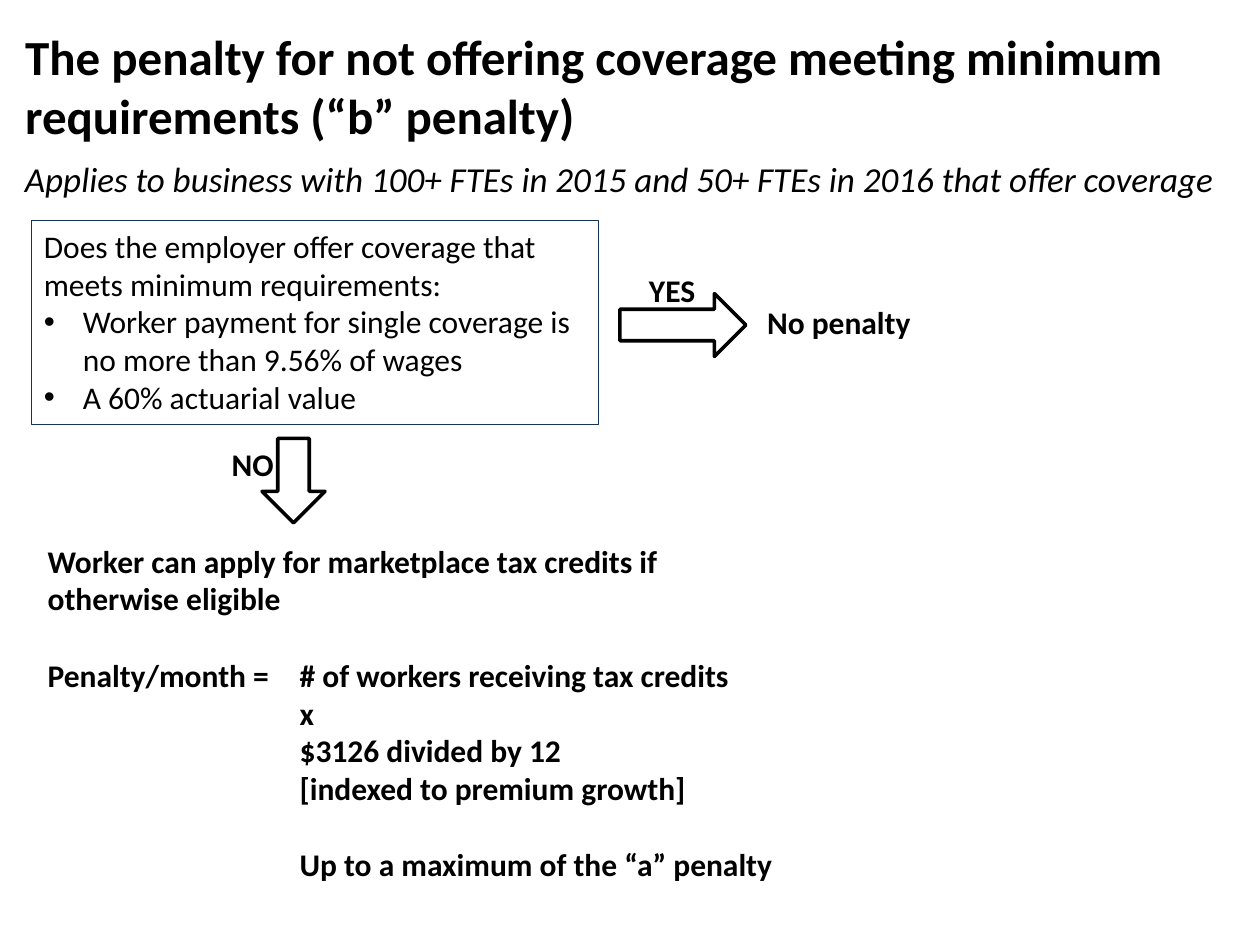
from lxml import etree
from pptx import Presentation
from pptx import util as u
from pptx.dml.color import RGBColor
from pptx.enum import shapes, text
from pptx.oxml.ns import qn

BLACK = RGBColor(0x00, 0x00, 0x00)
WHITE = RGBColor(0xFF, 0xFF, 0xFF)
NAVY = RGBColor(0x13, 0x35, 0x59)
LEFT = text.PP_ALIGN.LEFT
CENTER = text.PP_ALIGN.CENTER


class FlowPage:
    font = "Calibri"
    size = 18
    blank_line = 22

    def __init__(self, deck):
        self.page = deck.slides.add_slide(deck.slide_layouts[5])

    def frame(self, box):
        frame = box.text_frame
        frame.word_wrap = True
        frame.auto_size = text.MSO_AUTO_SIZE.NONE
        frame.vertical_anchor = text.MSO_ANCHOR.TOP
        return frame

    def add_words(self, para, words, size=None, bold=False, italic=False, align=LEFT):
        para.alignment = align
        span = para.add_run()
        span.text = words
        span.font.name = self.font
        span.font.size = u.Pt(size or self.size)
        span.font.bold = bold
        span.font.italic = italic
        span.font.color.rgb = BLACK

    def indent(self, para, margin, first=0, bullet=None):
        props = para._p.get_or_add_pPr()
        props.set("marL", str(u.Inches(margin)))
        props.set("indent", str(u.Inches(first)))
        if bullet:
            etree.SubElement(props, qn("a:buFont")).set("typeface", "Arial")
            etree.SubElement(props, qn("a:buChar")).set("char", bullet)

    def title(self, words, left, top, width, height):
        box = self.page.shapes.title
        box.left, box.top = u.Inches(left), u.Inches(top)
        box.width, box.height = u.Inches(width), u.Inches(height)
        self.add_words(self.frame(box).paragraphs[0], words, size=28, bold=True)

    def label(self, words, left, top, width, height, **style):
        box = self.page.shapes.add_textbox(*map(u.Inches, (left, top, width, height)))
        frame = self.frame(box)
        self.add_words(frame.paragraphs[0], words, **style)
        return frame

    def shape(self, kind, left, top, width, height, line, weight, fill=None):
        box = self.page.shapes.add_shape(kind, *map(u.Inches, (left, top, width, height)))
        box.shadow.inherit = False
        if fill is None:
            box.fill.background()
        else:
            box.fill.solid()
            box.fill.fore_color.rgb = fill
        box.line.color.rgb = line
        box.line.width = u.Pt(weight)
        return box

    def arrow(self, kind, left, top, width, height):
        self.shape(kind, left, top, width, height, BLACK, 2, WHITE)

    def question(self, words, points, left, top, width, height):
        box = self.shape(shapes.MSO_SHAPE.RECTANGLE, left, top, width, height, NAVY, 0.75)
        frame = self.frame(box)
        self.add_words(frame.paragraphs[0], words)
        for point in points:
            para = frame.add_paragraph()
            self.add_words(para, point)
            self.indent(para, 0.31, -0.31, "•")

    def formula(self, intro, name, terms, limit, left, top, width, height):
        frame = self.label(intro, left, top, width, height, bold=True)
        for words in (f"{name}\t{terms[0]}", *terms[1:], limit):
            para = frame.add_paragraph()
            self.add_words(para, words, bold=True)
            starts = words.startswith(name)
            self.indent(para, 2, -2 if starts else 0)
            if starts or words == limit:
                para.space_before = u.Pt(self.blank_line)


def main():
    deck = Presentation()
    deck.slide_width, deck.slide_height = u.Inches(10), u.Inches(7.5)
    flow = FlowPage(deck)

    flow.label(
        "Applies to business with 100+ FTEs in 2015 and 50+ FTEs in 2016 that offer coverage",
        0.1, 1.2, 9.8, 5.5, size=20, italic=True)
    flow.title(
        "The penalty for not offering coverage meeting minimum requirements (“b” penalty)",
        0.1, 0.16, 9.8, 1)
    flow.question(
        "Does the employer offer coverage that meets minimum requirements:",
        ["Worker payment for single coverage is no more than 9.56% of wages",
         "A 60% actuarial value"],
        0.25, 1.75, 4.5, 1.62)

    flow.arrow(shapes.MSO_SHAPE.RIGHT_ARROW, 4.92, 2.33, 1, 0.5)
    flow.label("No penalty", 5.99, 2.36, 2, 0.4, bold=True)
    flow.label("YES", 4.75, 2.1, 1.17, 0.4, bold=True, align=CENTER)
    flow.arrow(shapes.MSO_SHAPE.DOWN_ARROW, 2.08, 3.48, 0.5, 0.67)
    flow.label("NO", 1.42, 3.48, 1.17, 0.4, bold=True, align=CENTER)

    flow.formula(
        "Worker can apply for marketplace tax credits if otherwise eligible",
        "Penalty/month =",
        ["# of workers receiving tax credits", "x",
         "$3126 divided by 12", "[indexed to premium growth]"],
        "Up to a maximum of the “a” penalty",
        0.28, 4.25, 5.97, 2.83)

    deck.save("out.pptx")


if __name__ == "__main__":
    main()
